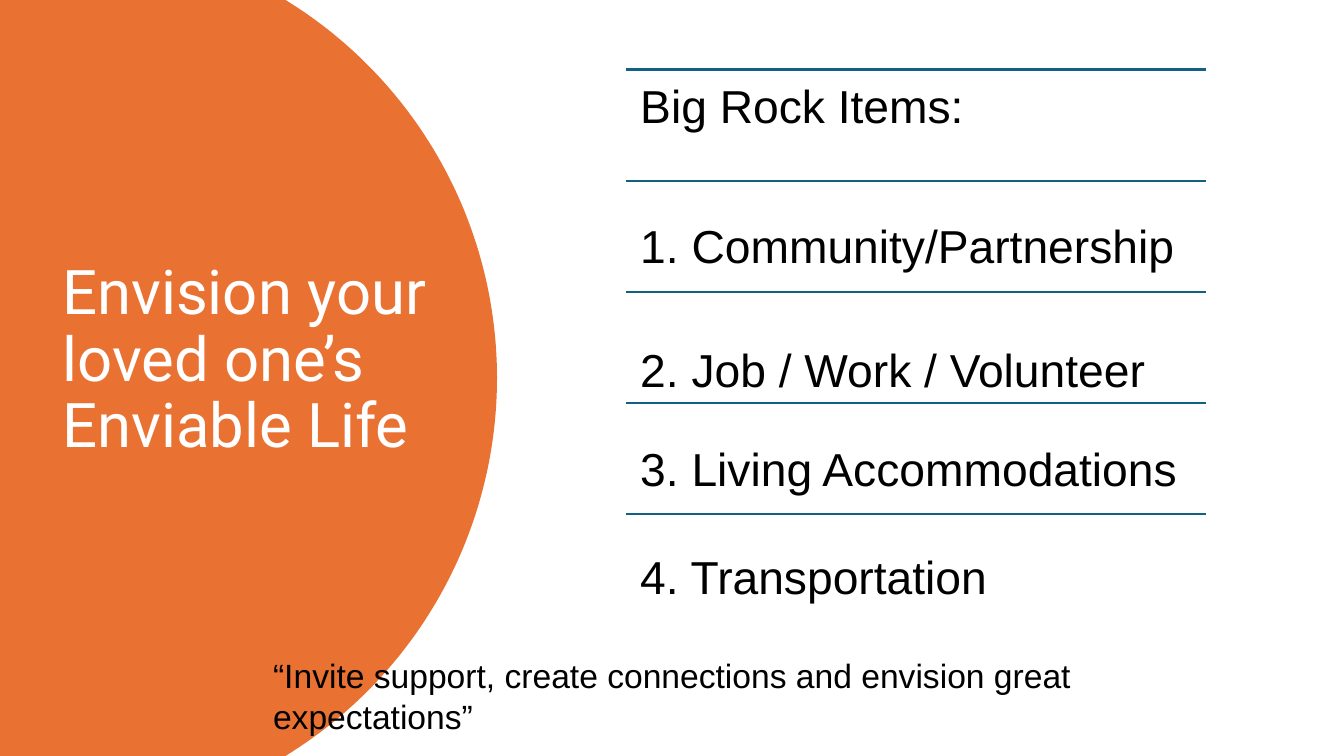
from math import asin, cos, sin

from lxml.etree import SubElement
from pptx import Presentation
from pptx.dml.color import RGBColor
from pptx.enum.shapes import MSO_CONNECTOR
from pptx.enum.text import MSO_ANCHOR
from pptx.oxml.ns import qn
from pptx.util import Inches, Pt

COLORS = {"orange": "E97132", "teal": "126082", "white": "FFFFFF", "black": "000000"}
ITEMS = [
    ("Big Rock Items:", 0.69),
    ("1. Community/Partnership", 2.08),
    ("2. Job / Work / Volunteer", 3.31),
    ("3. Living Accommodations", 4.29),
    ("4. Transportation", 5.36),
]
LIST_LEFT, LIST_TOP, LIST_WIDTH, ROW_STEP = 6.21, 0.69, 5.75, 1.1025


def write_text(tf, text, font="Arial", size=33, color="black", spacing=None):
    p = tf.paragraphs[0]
    p.line_spacing = spacing
    r = p.add_run()
    r.text = text
    r.font.name = font
    r.font.size = Pt(size)
    r.font.color.rgb = RGBColor.from_string(COLORS[color])


class SlideBuilder:
    def __init__(self, slide):
        self.slide = slide

    def text(self, text, left, top, width, height, inset=(0.1, 0.05),
             anchor=MSO_ANCHOR.TOP, **style):
        sp = self.slide.shapes.add_textbox(*map(Inches, (left, top, width, height)))
        tf = sp.text_frame
        tf.word_wrap = True
        tf.vertical_anchor = anchor
        tf.margin_left = tf.margin_right = Inches(inset[0])
        tf.margin_top = tf.margin_bottom = Inches(inset[1])
        write_text(tf, text, **style)

    def rule(self, left, top, width):
        line = self.slide.shapes.add_connector(
            MSO_CONNECTOR.STRAIGHT, Inches(left), Inches(top),
            Inches(left + width), Inches(top))
        line.line.color.rgb = RGBColor.from_string(COLORS["teal"])
        line.line.width = Pt(1.5)
        SubElement(line._element.spPr, qn("a:effectLst"))

    def round_panel(self, center_x, radius, height, steps=120):
        middle = height / 2
        limit = asin(middle / radius)
        angles = [limit * (2 * i / steps - 1) for i in range(steps + 1)]
        arc = [(Inches(center_x + radius * cos(a)), Inches(middle + radius * sin(a)))
               for a in angles]
        builder = self.slide.shapes.build_freeform(0, 0)
        builder.add_line_segments(arc + [(0, Inches(height))], close=True)
        sp = builder.convert_to_shape()
        sp.shadow.inherit = False
        sp.fill.solid()
        sp.fill.fore_color.rgb = RGBColor.from_string(COLORS["orange"])
        sp.line.fill.background()


def main():
    prs = Presentation()
    prs.slide_width, prs.slide_height = Inches(13.33), Inches(7.5)
    s = SlideBuilder(prs.slides.add_slide(prs.slide_layouts[6]))

    s.round_panel(center_x=0.53, radius=4.4, height=7.5)
    s.text("Envision your loved one’s Enviable Life", 0.52, 0.54, 3.89, 6.09,
           anchor=MSO_ANCHOR.MIDDLE, font="Roboto", size=44, color="white", spacing=0.9)

    for i, (item, top) in enumerate(ITEMS):
        s.rule(LIST_LEFT, LIST_TOP + i * ROW_STEP, LIST_WIDTH)
        s.text(item, LIST_LEFT, top, LIST_WIDTH, 0.86, inset=(0.14, 0.14), spacing=0.9)

    s.text("“Invite support, create connections and envision great expectations”",
           2.61, 6.45, 10.08, 0.5, size=24)
    prs.save("out.pptx")


if __name__ == "__main__":
    main()
